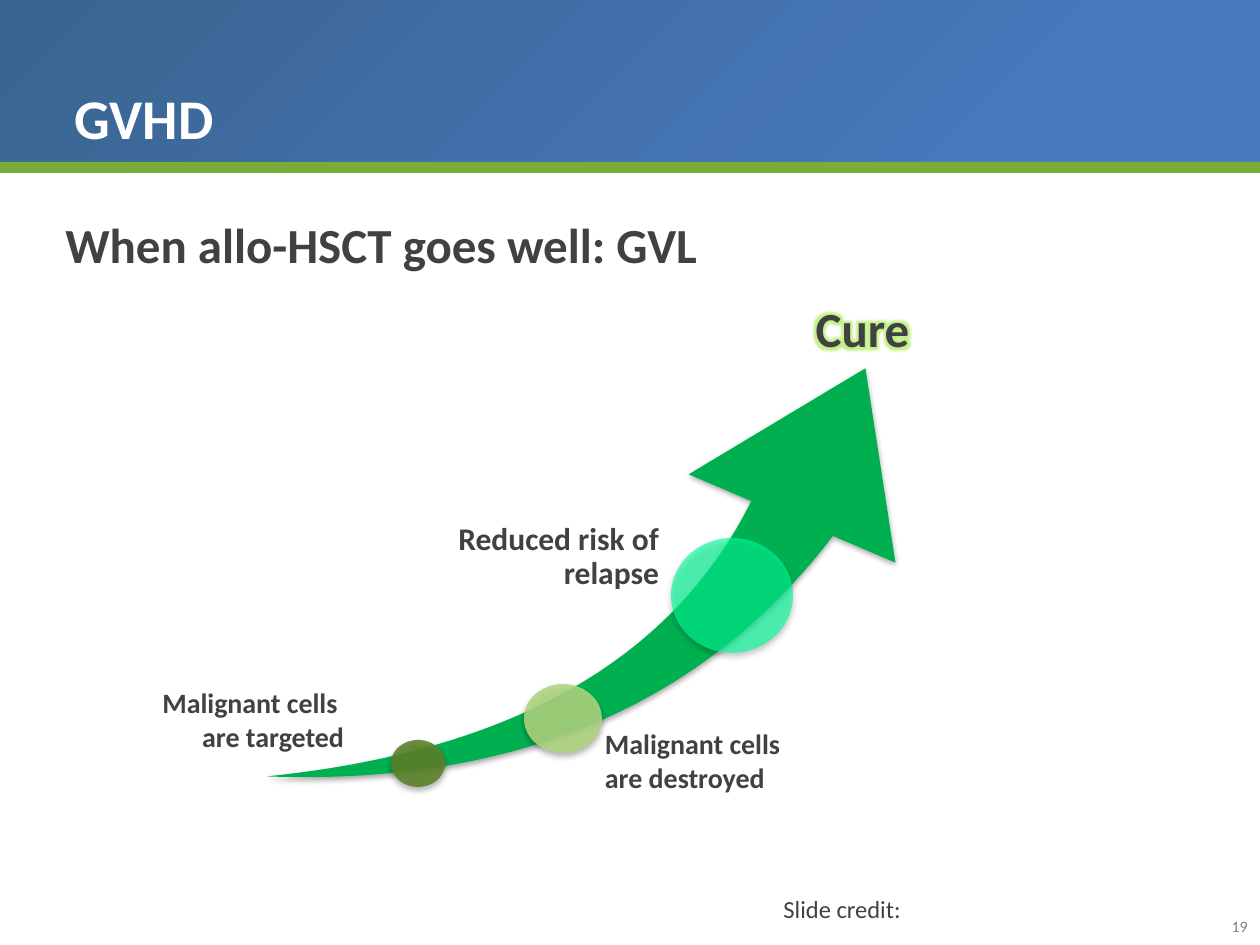
from lxml import etree
from pptx import Presentation, util as u
from pptx.dml.color import RGBColor
from pptx.enum import shapes, text
from pptx.oxml import parse_xml
from pptx.oxml.ns import nsdecls, qn

SCALE = 914400 / 126  # EMU in one px
FONT = "Calibri"
WHITE = RGBColor(0xFF, 0xFF, 0xFF)
DARK = RGBColor(0x41, 0x41, 0x41)
GREY = RGBColor(0x7F, 0x7F, 0x7F)
BAND_START = RGBColor(0x39, 0x64, 0x90)
BAND_END = RGBColor(0x48, 0x78, 0xBD)
RULE = RGBColor(0x79, 0xAD, 0x38)
ARROW = RGBColor(0x00, 0xB0, 0x50)
OLIVE = RGBColor(0x5B, 0x82, 0x2A)
LIGHT_GREEN = RGBColor(0xAF, 0xD6, 0x80)
MINT = RGBColor(0x00, 0xFF, 0x99)
GLOW = RGBColor(0x9B, 0xE8, 0x3C)

SHAPE = shapes.MSO_SHAPE
LEFT, CENTER, RIGHT = text.PP_ALIGN.LEFT, text.PP_ALIGN.CENTER, text.PP_ALIGN.RIGHT
TOP, MIDDLE, BOTTOM = text.MSO_ANCHOR.TOP, text.MSO_ANCHOR.MIDDLE, text.MSO_ANCHOR.BOTTOM

# Content: boxes are left, top, width, height in px
TEXTS = [
    dict(lines=["19"], box=(1207, 911, 53, 31), size=9, color=GREY, bold=False, align=RIGHT),
    dict(lines=["Slide credit:"], box=(771, 888, 144, 43), size=14, bold=False, wrap=False),
    dict(lines=["GVHD"], box=(62, 13, 1135, 145), size=32, color=WHITE, anchor=BOTTOM, spacing=0.9),
    dict(lines=["When allo-HSCT goes well: GVL"], box=(53, 208, 878, 72), size=28),
    dict(lines=["Malignant cells ", "are targeted"], box=(134, 664, 213, 92), size=16,
         align=RIGHT, anchor=BOTTOM, inset=3),
    dict(lines=["Reduced risk of relapse"], box=(360, 509, 302, 96), size=18,
         align=RIGHT, anchor=MIDDLE, inset=3, spacing=0.9),
    dict(lines=["Malignant cells", "are destroyed"], box=(602, 701, 309, 96), size=16,
         anchor=BOTTOM, inset=3),
    dict(lines=["Cure"], box=(688, 301, 349, 96), size=28, align=CENTER, inset=4,
         spacing=0.9, glow=True),
]
ARROW_BOX = (325, 314, 563, 541)
MILESTONES = [  # box, colour, opacity in percent
    ((391, 740, 54, 47), OLIVE, 90),
    ((524, 684, 78, 69), LIGHT_GREEN, 87),
    ((671, 538, 122, 115), MINT, 63),
]


def px(*values):
    return [u.Emu(round(value * SCALE)) for value in values]


def add_shape(slide, kind, box, color, opacity=100):
    shape = slide.shapes.add_shape(kind, *px(*box))
    shape.shadow.inherit = False
    shape.line.fill.background()
    shape.fill.solid()
    shape.fill.fore_color.rgb = color
    if opacity < 100:
        color_element = shape.element.spPr.find(qn("a:solidFill"))[0]
        etree.SubElement(color_element, qn("a:alpha")).set("val", str(opacity * 1000))
    return shape


def add_shadow(shape, opacity, blur, distance):
    effects = shape.element.spPr.find(qn("a:effectLst"))
    effects.append(parse_xml(
        f'<a:outerShdw {nsdecls("a")} blurRad="{u.Pt(blur)}" dist="{u.Pt(distance)}" '
        f'dir="5400000" rotWithShape="0"><a:srgbClr val="000000">'
        f'<a:alpha val="{opacity * 1000}"/></a:srgbClr></a:outerShdw>'))


def add_corner_gradient(shape):
    fill = shape.element.spPr.find(qn("a:solidFill"))
    fill.getparent().replace(fill, parse_xml(
        f'<a:gradFill {nsdecls("a")} rotWithShape="1"><a:gsLst>'
        f'<a:gs pos="0"><a:srgbClr val="{BAND_START}"/></a:gs>'
        f'<a:gs pos="79000"><a:srgbClr val="{BAND_END}"/></a:gs></a:gsLst>'
        f'<a:path path="circle"><a:fillToRect r="100000" b="100000"/></a:path></a:gradFill>'))


def add_glow(run):
    fill = run.font._element.find(qn("a:solidFill"))
    fill.addnext(parse_xml(
        f'<a:effectLst {nsdecls("a")}><a:glow rad="{u.Pt(8)}"><a:srgbClr val="{GLOW}">'
        f'<a:alpha val="60000"/></a:srgbClr></a:glow></a:effectLst>'))


def add_text(slide, lines, box, size, color=DARK, bold=True, align=LEFT, anchor=TOP,
             inset=None, spacing=None, wrap=True, glow=False):
    frame = slide.shapes.add_textbox(*px(*box)).text_frame
    frame_format = dict(word_wrap=wrap, vertical_anchor=anchor)
    if inset is not None:
        for side in ("left", "top", "right", "bottom"):
            frame_format[f"margin_{side}"] = px(inset)[0]
    for name, value in frame_format.items():
        setattr(frame, name, value)
    for index, line in enumerate(lines):
        paragraph = frame.add_paragraph() if index else frame.paragraphs[0]
        paragraph.alignment = align
        paragraph.line_spacing = spacing
        run = paragraph.add_run()
        run.text = line
        for name, value in dict(name=FONT, size=u.Pt(size), bold=bold).items():
            setattr(run.font, name, value)
        run.font.color.rgb = color
        if glow:
            add_glow(run)


def main():
    presentation = Presentation()
    presentation.slide_width, presentation.slide_height = px(1260, 945)
    slide = presentation.slides.add_slide(presentation.slide_layouts[6])

    # Header band and green rule
    add_corner_gradient(add_shape(slide, SHAPE.RECTANGLE, (0, 0, 1260, 173), BAND_START))
    add_shape(slide, SHAPE.RECTANGLE, (0, 162, 1260, 11), RULE)

    # Title, heading, labels and footer
    for item in TEXTS:
        add_text(slide, **item)

    # Rising arrow
    arrow = add_shape(slide, SHAPE.SWOOSH_ARROW, ARROW_BOX, ARROW)
    arrow.adjustments[0], arrow.adjustments[1] = 0.163, 0.314
    arrow.rotation = 106.7
    arrow.element.spPr.find(qn("a:xfrm")).set("flipH", "1")
    add_shadow(arrow, 35, 3.1, 1.8)

    # Milestones along the arrow
    for box, color, opacity in MILESTONES:
        add_shadow(add_shape(slide, SHAPE.OVAL, box, color, opacity), 32, 3.5, 2.2)

    presentation.save("out.pptx")


if __name__ == "__main__":
    main()
